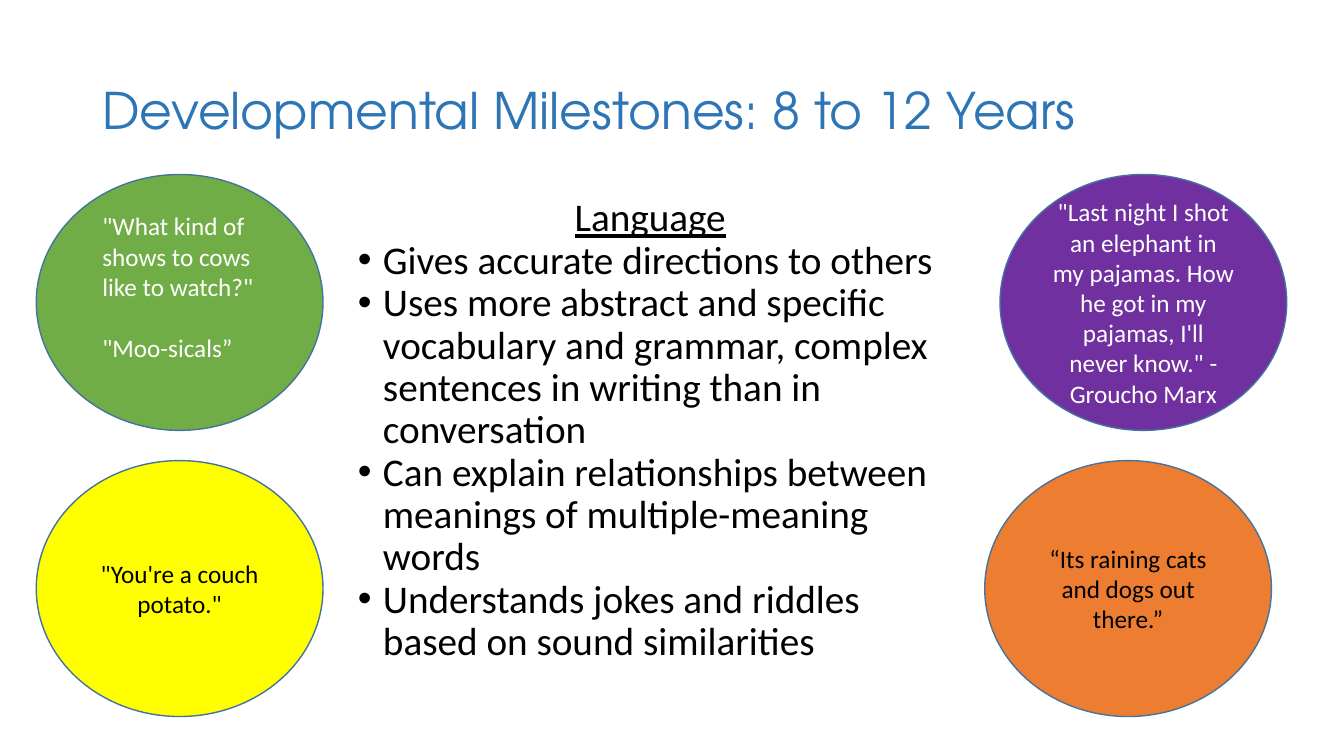
import pptx
import pptx.util
import pptx.dml.color
import pptx.enum.shapes
import pptx.enum.text
import pptx.oxml.ns
from lxml import etree

Pt = pptx.util.Pt
RGBColor = pptx.dml.color.RGBColor
Align = pptx.enum.text.PP_ALIGN
Anchor = pptx.enum.text.MSO_ANCHOR

BLUE = RGBColor(0x2E, 0x75, 0xB6)
OUTLINE = RGBColor(0x43, 0x73, 0x9E)
GREEN = RGBColor(0x70, 0xAD, 0x47)
PURPLE = RGBColor(0x70, 0x30, 0xA0)
YELLOW = RGBColor(0xFF, 0xFF, 0x00)
ORANGE = RGBColor(0xED, 0x7D, 0x31)
WHITE = RGBColor(0xFF, 0xFF, 0xFF)
BLACK = RGBColor(0x00, 0x00, 0x00)

LANGUAGE_SKILLS = [
    "Gives accurate directions to others",
    "Uses more abstract and specific vocabulary and grammar, complex sentences in writing than in conversation",
    "Can explain relationships between meanings of multiple-meaning words",
    "Understands jokes and riddles based on sound similarities",
]
OVAL_W, OVAL_H = 204.8, 182.8
LEFT_X, UPPER_Y, LOWER_Y = 25.9, 124.6, 329


def add_bullet(p, indent):
    pPr = p._p.get_or_add_pPr()
    pPr.set("marL", str(Pt(indent)))
    pPr.set("indent", str(-Pt(indent)))
    font = etree.SubElement(pPr, pptx.oxml.ns.qn("a:buFont"))
    font.set("typeface", "Arial")
    etree.SubElement(pPr, pptx.oxml.ns.qn("a:buChar")).set("char", "•")


def write(p, text, size=18, color=BLACK, font="Calibri", align=Align.LEFT,
          underline=False, spacing=1.0, before=0, bullet=False):
    p.alignment = align
    p.line_spacing = spacing
    p.space_before = Pt(before)
    if bullet:
        add_bullet(p, 18)
    r = p.add_run()
    r.text = text
    r.font.size = Pt(size)
    r.font.name = font
    r.font.color.rgb = color
    r.font.underline = underline


def add_title(s, text):
    sp = s.shapes.title
    sp.left, sp.top, sp.width, sp.height = Pt(66), Pt(28.75), Pt(828), Pt(104.4)
    tf = sp.text_frame
    tf.auto_size = pptx.enum.text.MSO_AUTO_SIZE.NONE
    tf.vertical_anchor = Anchor.MIDDLE
    write(tf.paragraphs[0], text, size=36, color=BLUE, font="TeX Gyre Adventor", spacing=0.9)


def add_oval(s, x, y, fill, text="", color=BLACK):
    sp = s.shapes.add_shape(pptx.enum.shapes.MSO_SHAPE.OVAL, Pt(x), Pt(y), Pt(OVAL_W), Pt(OVAL_H))
    sp.shadow.inherit = False
    sp.fill.solid()
    sp.fill.fore_color.rgb = fill
    sp.line.color.rgb = OUTLINE
    sp.line.width = Pt(1)
    if text:
        tf = sp.text_frame
        tf.word_wrap = True
        tf.vertical_anchor = Anchor.MIDDLE
        write(tf.paragraphs[0], text, color=color, align=Align.CENTER)


def add_box(s, x, y, w, h):
    tf = s.shapes.add_textbox(Pt(x), Pt(y), Pt(w), Pt(h)).text_frame
    tf.word_wrap = True
    return tf


def add_language(s):
    tf = add_box(s, 255.6, 141.5, 417.6, 350)
    tf.margin_left = tf.margin_right = tf.margin_top = tf.margin_bottom = 0
    write(tf.paragraphs[0], "Language", size=28, align=Align.CENTER, underline=True, spacing=0.9)
    for skill in LANGUAGE_SKILLS:
        write(tf.add_paragraph(), skill, size=28, spacing=0.9, bullet=True)


def add_riddle(s):
    tf = add_box(s, 66, 147, 143.3, 116.6)
    write(tf.paragraphs[0], '"What kind of shows to cows like to watch?"', color=WHITE)
    write(tf.add_paragraph(), '"Moo-sicals”', color=WHITE, before=22)


def main():
    prs = pptx.Presentation()
    prs.slide_width, prs.slide_height = Pt(960), Pt(540)
    s = prs.slides.add_slide(prs.slide_layouts[5])
    add_title(s, "Developmental Milestones: 8 to 12 Years")
    add_language(s)
    add_oval(s, LEFT_X, UPPER_Y, GREEN)
    add_riddle(s)
    add_oval(s, 714.3, UPPER_Y, PURPLE,
             '"Last night I shot an elephant in my pajamas. How he got in my pajamas, '
             'I\'ll never know." - Groucho Marx', WHITE)
    add_oval(s, LEFT_X, LOWER_Y, YELLOW, '"You\'re a couch potato."')
    add_oval(s, 703.4, LOWER_Y, ORANGE, "“Its raining cats and dogs out there.”")
    prs.save("out.pptx")


if __name__ == "__main__":
    main()
